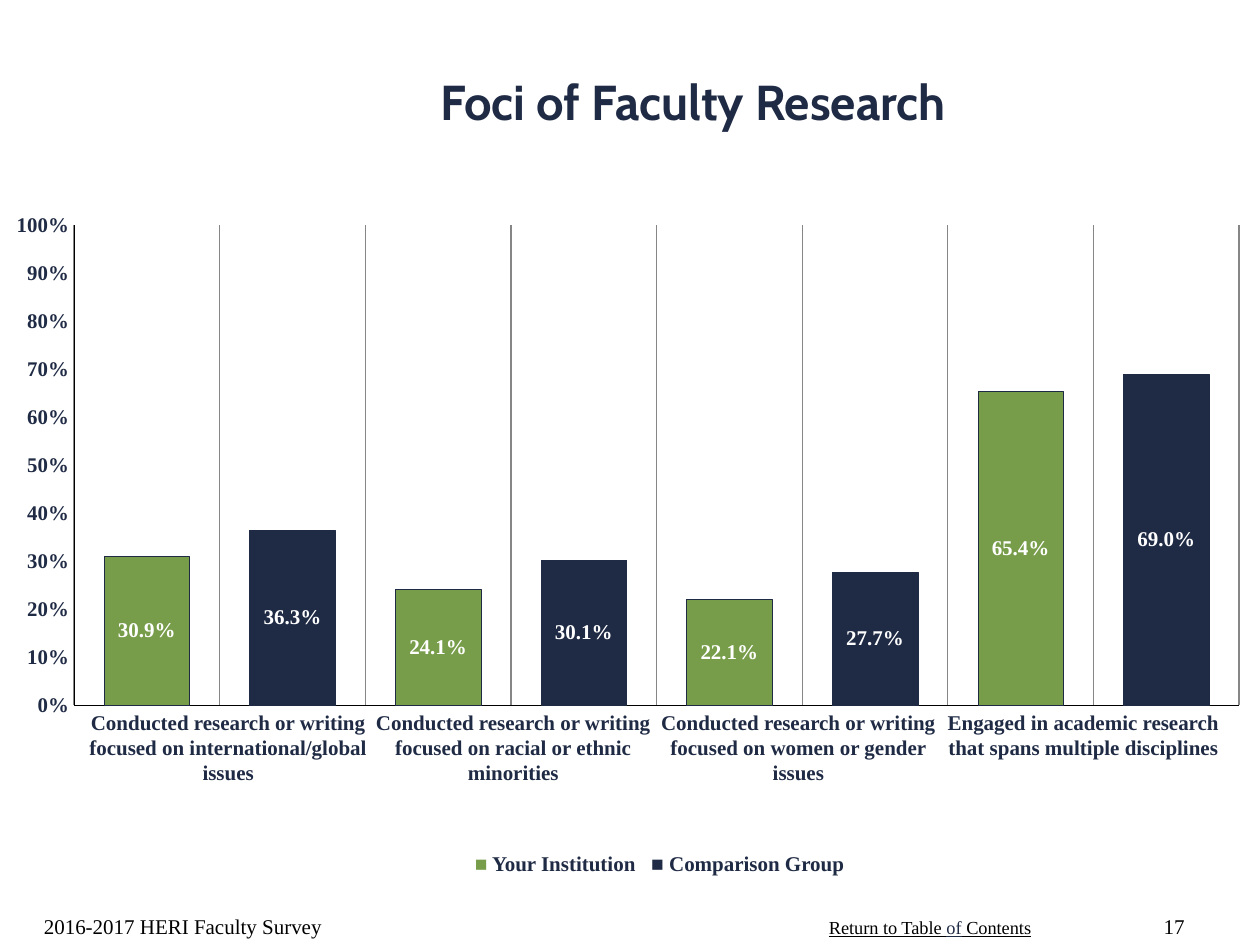
import pptx
import pptx.chart.data
import pptx.dml.color
import pptx.enum.chart
import pptx.enum.text
import pptx.oxml
import pptx.oxml.ns
import pptx.util
from pptx.util import Inches

COLORS = {"navy": "1F2A44", "green": "789D4A", "black": "000000",
          "white": "FFFFFF", "grid": "868686"}
SERIF = "Times New Roman"
ALIGN = pptx.enum.text.PP_ALIGN
ANCHOR = pptx.enum.text.MSO_ANCHOR
VALUES = [0.309, 0.363, 0.241, 0.301, 0.221, 0.277, 0.654, 0.69]
TOPICS = [
    "Conducted research or writing focused on international/global issues",
    "Conducted research or writing focused on racial or ethnic minorities",
    "Conducted research or writing focused on women or gender issues",
    "Engaged in academic research that spans multiple disciplines",
]


def rgb(name):
    """Return the named palette colour."""
    return pptx.dml.color.RGBColor.from_string(COLORS[name])


def style_font(font, size, color, bold=False, name=SERIF):
    """Set the face, size, weight and colour of a font."""
    font.name = name
    font.size = pptx.util.Pt(size)
    font.bold = bold
    font.color.rgb = rgb(color)


def add_text(slide, box, runs, size, color="black", bold=False, name=SERIF,
             align=ALIGN.LEFT, anchor=ANCHOR.TOP, wrap=True, tab=None):
    """Add a one-paragraph text box of (text, colour) runs and return it."""
    shape = slide.shapes.add_textbox(*map(Inches, box))
    frame = shape.text_frame
    frame.word_wrap = wrap
    frame.vertical_anchor = anchor
    paragraph = frame.paragraphs[0]
    paragraph.alignment = align
    if tab:
        properties = paragraph._p.get_or_add_pPr()
        properties.append(pptx.oxml.parse_xml(
            f'<a:tabLst {pptx.oxml.ns.nsdecls("a")}>'
            f'<a:tab pos="{Inches(tab)}" algn="l"/></a:tabLst>'))
    style_font(paragraph.font, size, color, bold, name)
    for text, run_color in runs:
        run = paragraph.add_run()
        run.text = text
        if run_color != color:
            run.font.color.rgb = rgb(run_color)
    return shape


def add_title(slide, box):
    """Place the slide title."""
    shape = add_text(slide, box, [("Foci of Faculty Research", "navy")], 28, "navy",
                     True, "Cabin", ALIGN.CENTER, ANCHOR.MIDDLE)
    shape.text_frame.margin_bottom = Inches(0.28)


def set_plot_layout(chart, left, top, width, height):
    """Fix the inner plot area as fractions of the chart."""
    plot_area = chart._chartSpace.chart.plotArea
    for layout in plot_area.findall(pptx.oxml.ns.qn("c:layout")):
        plot_area.remove(layout)
    sizes = "".join(f'<c:{tag} val="{value}"/>' for tag, value in
                    zip("xywh", (left, top, width, height)))
    plot_area.insert(0, pptx.oxml.parse_xml(
        f'<c:layout {pptx.oxml.ns.nsdecls("c")}><c:manualLayout>'
        '<c:layoutTarget val="inner"/><c:xMode val="edge"/><c:yMode val="edge"/>'
        f'{sizes}</c:manualLayout></c:layout>'))


def style_axes(chart):
    """Format the percentage axis and the unlabelled category axis."""
    for axis in (chart.category_axis, chart.value_axis):
        axis.major_tick_mark = pptx.enum.chart.XL_TICK_MARK.NONE
        axis.minor_tick_mark = pptx.enum.chart.XL_TICK_MARK.NONE
        axis.format.line.color.rgb = rgb("black")
        axis.format.line.width = pptx.util.Pt(0.19)
    categories = chart.category_axis
    categories.tick_label_position = pptx.enum.chart.XL_TICK_LABEL_POSITION.NONE
    categories.has_major_gridlines = True
    categories.major_gridlines.format.line.color.rgb = rgb("grid")
    categories.major_gridlines.format.line.width = pptx.util.Pt(0.75)
    percent = chart.value_axis
    percent.has_major_gridlines = False
    percent.minimum_scale, percent.maximum_scale = 0, 1
    percent.major_unit = 0.1
    percent.tick_labels.number_format = "0%"
    percent.tick_labels.number_format_is_linked = False


def add_research_chart(slide, box):
    """Place the column chart of institution and comparison group pairs."""
    data = pptx.chart.data.CategoryChartData(number_format="0.0%")
    data.categories = [str(number) for number in range(1, len(VALUES) + 1)]
    data.add_series("Series 1", VALUES)
    chart = slide.shapes.add_chart(pptx.enum.chart.XL_CHART_TYPE.COLUMN_STACKED,
                                   *map(Inches, box), data).chart
    chart.has_legend = False
    chart.has_title = False
    style_font(chart.font, 11.9, "navy", True)
    style_axes(chart)
    set_plot_layout(chart, 0.055, 0.029, 0.946, 0.933)
    plot = chart.plots[0]
    plot.gap_width, plot.overlap = 70, 100
    plot.vary_by_categories = False
    series = plot.series[0]
    for index in range(len(VALUES)):
        column = series.points[index].format
        column.fill.solid()
        column.fill.fore_color.rgb = rgb("navy" if index % 2 else "green")
        column.line.color.rgb = rgb("navy")
        column.line.width = pptx.util.Pt(0.25)
    labels = series.data_labels
    labels.show_value = True
    labels.number_format = "0.0%"
    labels.number_format_is_linked = False
    labels.position = pptx.enum.chart.XL_LABEL_POSITION.CENTER
    style_font(labels.font, 12, "white", True)


def add_topics(slide, box):
    """Place the research topics in equal columns under the chart."""
    left, top, width, height = box
    step = width / len(TOPICS)
    for index, topic in enumerate(TOPICS):
        shape = add_text(slide, (left + index * step, top, step, height),
                         [(topic, "navy")], 12, "navy", True, align=ALIGN.CENTER)
        shape.text_frame.margin_left = shape.text_frame.margin_right = 0


def add_legend(slide, box):
    """Place the colour key."""
    add_text(slide, box, [("■", "green"), (" Your Institution\t■ Comparison Group", "navy")],
             12, "navy", True, tab=1.4)


def add_footer(slide, box):
    """Place the survey name, contents note and page number."""
    left, top, width, height = box
    add_text(slide, (left, top, 3.17, height), [("2016-2017 HERI Faculty Survey", "black")],
             12, anchor=ANCHOR.BOTTOM)
    note = add_text(slide, (left + 6.23, top + 0.22, 1.82, 0.28),
                    [("Return to Table ", "black"), ("of", "navy"), (" Contents", "black")],
                    10.5, wrap=False)
    note.text_frame.paragraphs[0].font.underline = True
    add_text(slide, (left + width - 0.5, top, 0.5, height), [("17", "black")], 12,
             align=ALIGN.RIGHT, anchor=ANCHOR.BOTTOM)


def main():
    """Build and save the slide."""
    presentation = pptx.Presentation()
    presentation.slide_width, presentation.slide_height = Inches(10), Inches(7.5)
    slide = presentation.slides.add_slide(presentation.slide_layouts[6])
    add_title(slide, (1, 0.17, 9, 1.5))
    add_research_chart(slide, (0.06, 1.67, 9.78, 4.08))
    add_legend(slide, (3.67, 6.7, 3.42, 0.3))
    add_topics(slide, (0.68, 5.58, 9.05, 0.91))
    add_footer(slide, (0.25, 7, 9.25, 0.5))
    presentation.save("out.pptx")


if __name__ == "__main__":
    main()
